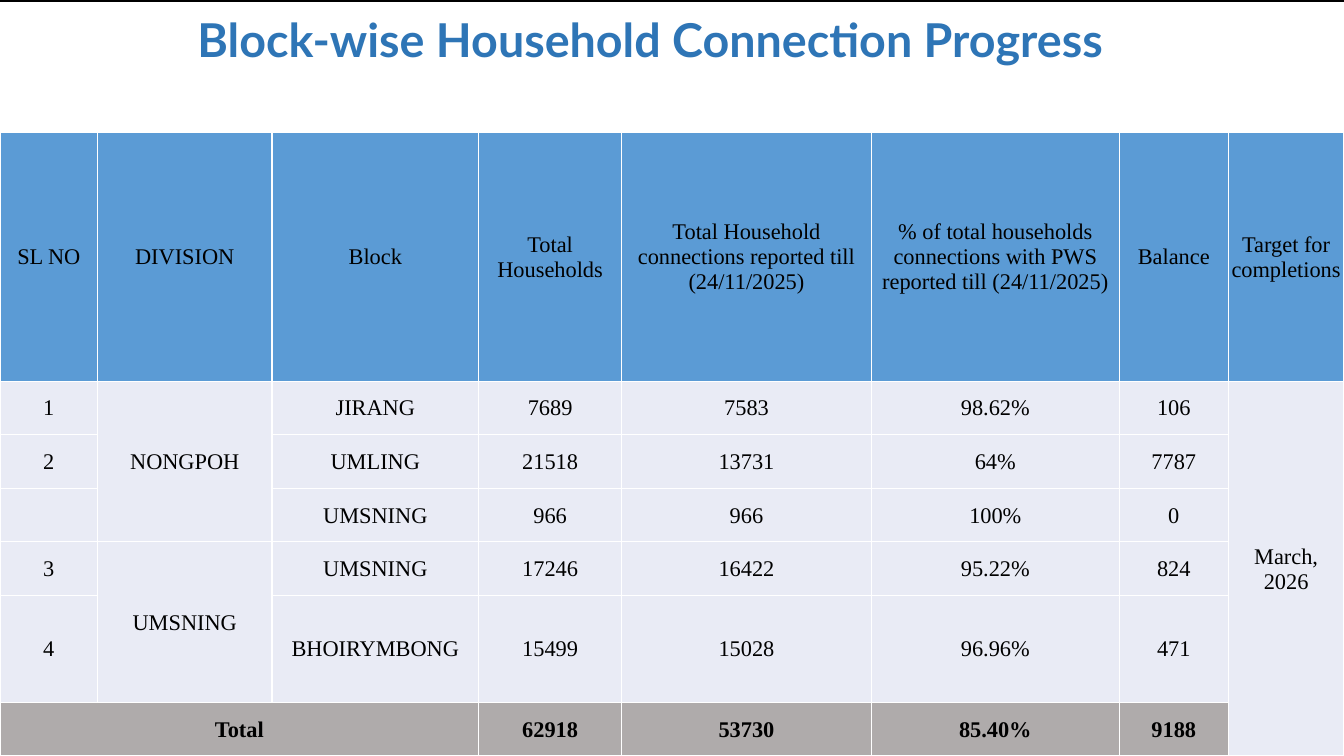
from lxml.etree import SubElement
from pptx import Presentation
from pptx.dml.color import RGBColor
from pptx.enum.shapes import MSO_SHAPE
from pptx.enum.text import MSO_ANCHOR, MSO_AUTO_SIZE, PP_ALIGN
from pptx.oxml.ns import qn
from pptx.util import Emu, Pt

PX = 9525  # 96 px to the inch
WIDTH, HEIGHT = 1280, 720
COLORS = {
    "edge": "000000", "page": "FFFFFF", "title": "2E75B6", "text": "000000",
    "header": "5B9BD5", "body": "E9EBF5", "total": "AFABAB", "border": "FFFFFF",
}
TITLE_FONT = {"name": "Lato", "size": Pt(33.3), "bold": True}
TABLE_FONT = {"name": "Times New Roman", "size": Pt(16), "bold": False}

COLUMN_WIDTHS = [93, 166, 197, 136, 238, 236, 104, 110]
ROW_HEIGHTS = [237, 51, 51, 51, 51, 102, 51]
ROWS = [
    ["SL NO", "DIVISION", "Block", "Total Households",
     "Total Household connections reported till (24/11/2025)",
     "% of total households connections with PWS reported till (24/11/2025)",
     "Balance", "Target for completions"],
    ["1", "NONGPOH", "JIRANG", "7689", "7583", "98.62%", "106", "March, 2026"],
    ["2", "", "UMLING", "21518", "13731", "64%", "7787", ""],
    ["", "", "UMSNING", "966", "966", "100%", "0", ""],
    ["3", "UMSNING", "UMSNING", "17246", "16422", "95.22%", "824", ""],
    ["4", "", "BHOIRYMBONG", "15499", "15028", "96.96%", "471", ""],
    ["Total", "", "", "62918", "53730", "85.40%", "9188", ""],
]
# First and last cell of each merged block, as (row, column)
MERGES = [((1, 1), (3, 1)), ((4, 1), (5, 1)), ((1, 7), (6, 7)), ((6, 0), (6, 2))]


def px(*lengths):
    return [Emu(length * PX) for length in lengths]


def color(name):
    return RGBColor.from_string(COLORS[name])


def apply(target, values):
    for name, value in values.items():
        setattr(target, name, value)


class SlideBuilder:
    def __init__(self, slide):
        self.slide = slide

    def fill(self, target, name):
        target.fill.solid()
        target.fill.fore_color.rgb = color(name)

    def format_font(self, font, values, name):
        apply(font, values)
        font.color.rgb = color(name)

    def page(self, *box):
        self.fill(self.slide.background, "edge")
        shape = self.slide.shapes.add_shape(MSO_SHAPE.RECTANGLE, *px(*box))
        shape.shadow.inherit = False
        self.fill(shape, "page")
        shape.line.fill.background()
        # The page lies behind the title
        self.slide.shapes.title.element.addprevious(shape.element)

    def title(self, text, *box):
        shape = self.slide.shapes.title
        apply(shape, dict(zip(("left", "top", "width", "height"), px(*box))))
        frame = shape.text_frame
        frame.text = text
        apply(frame, {"margin_left": 0, "margin_top": 0, "margin_right": 0,
                      "margin_bottom": 0, "word_wrap": False,
                      "auto_size": MSO_AUTO_SIZE.NONE,
                      "vertical_anchor": MSO_ANCHOR.TOP})
        paragraph = frame.paragraphs[0]
        apply(paragraph, {"alignment": PP_ALIGN.LEFT, "line_spacing": Pt(29.6),
                          "space_before": Pt(0)})
        self.format_font(paragraph.runs[0].font, TITLE_FONT, "title")

    def borders(self, cell):
        properties = cell._tc.get_or_add_tcPr()
        for side in ("a:lnL", "a:lnR", "a:lnT", "a:lnB"):
            line = SubElement(properties, qn(side), w=str(Pt(1)))
            paint = SubElement(line, qn("a:solidFill"))
            SubElement(paint, qn("a:srgbClr"), val=COLORS["border"])

    def cell(self, cell, text, fill, bold):
        self.borders(cell)
        self.fill(cell, fill)
        margin = Emu(PX)
        apply(cell, {"margin_left": margin, "margin_right": margin,
                     "margin_top": margin, "margin_bottom": 0,
                     "vertical_anchor": MSO_ANCHOR.MIDDLE})
        cell.text = text
        paragraph = cell.text_frame.paragraphs[0]
        paragraph.alignment = PP_ALIGN.CENTER
        self.format_font(paragraph.font, TABLE_FONT, "text")
        for run in paragraph.runs:
            self.format_font(run.font, {**TABLE_FONT, "bold": bold}, "text")

    def table(self, left, top):
        box = px(left, top, sum(COLUMN_WIDTHS), sum(ROW_HEIGHTS))
        table = self.slide.shapes.add_table(
            len(ROWS), len(COLUMN_WIDTHS), *box).table
        apply(table, {"first_row": False, "horz_banding": False})
        for column, width in zip(table.columns, px(*COLUMN_WIDTHS)):
            column.width = width
        for row, height in zip(table.rows, px(*ROW_HEIGHTS)):
            row.height = height

        last_row, last_column = len(ROWS) - 1, len(COLUMN_WIDTHS) - 1
        for row, texts in enumerate(ROWS):
            for column, text in enumerate(texts):
                is_total = row == last_row and column < last_column
                fill = "header" if row == 0 else "total" if is_total else "body"
                self.cell(table.cell(row, column), text, fill, is_total)
        for first, last in MERGES:
            table.cell(*first).merge(table.cell(*last))


def main():
    presentation = Presentation()
    presentation.slide_width, presentation.slide_height = px(WIDTH, HEIGHT)
    title_only = presentation.slide_layouts.get_by_name("Title Only")
    builder = SlideBuilder(presentation.slides.add_slide(title_only))

    # White page below a thin black edge
    builder.page(0, 2, WIDTH, HEIGHT - 2)

    # Heading
    builder.title("Block-wise Household Connection Progress", 188, 24, 866, 52)

    # Progress by block
    builder.table(0, 126)

    presentation.save("out.pptx")


if __name__ == "__main__":
    main()
